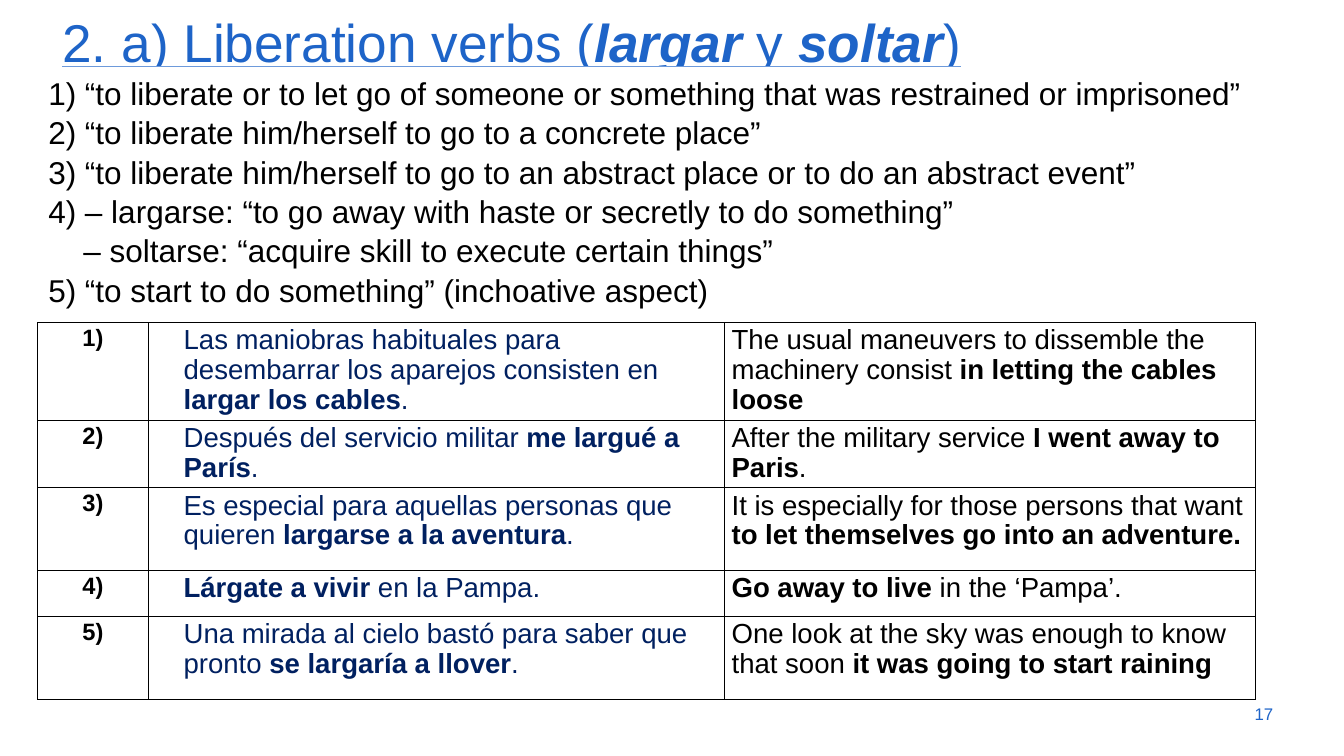
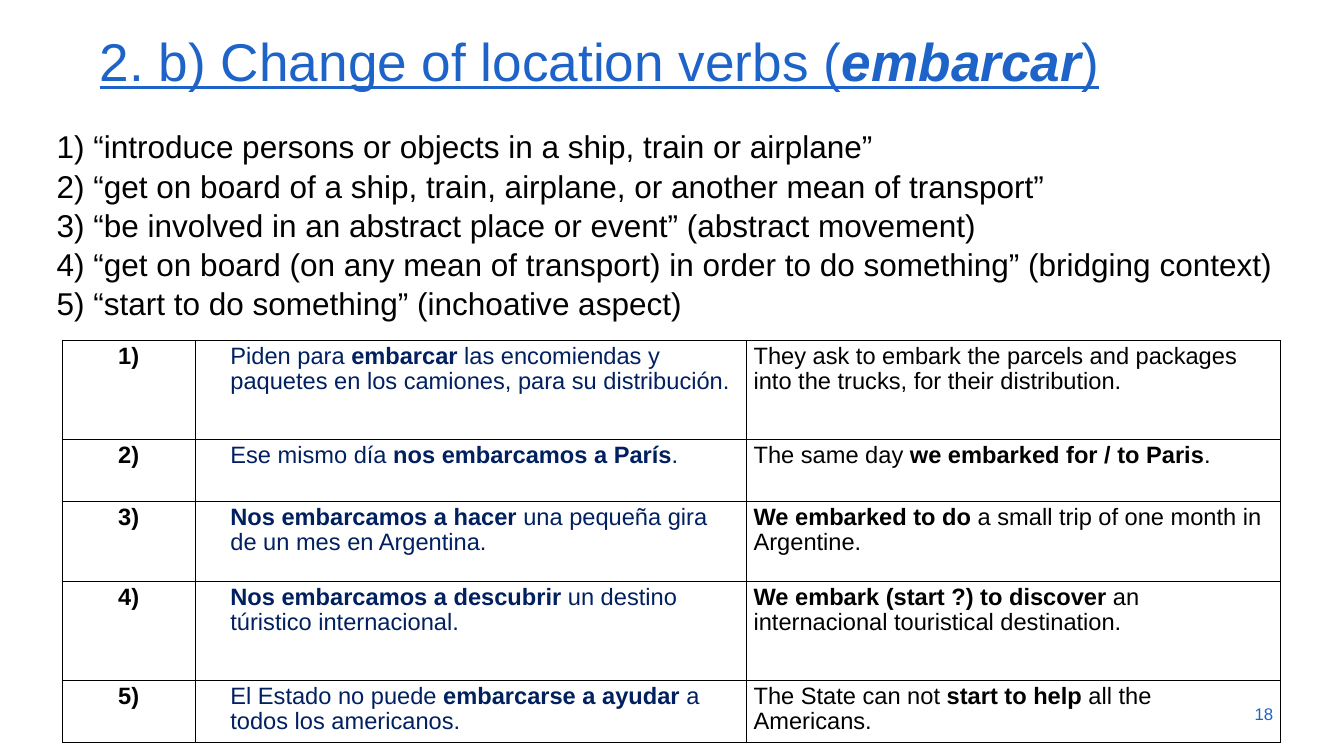
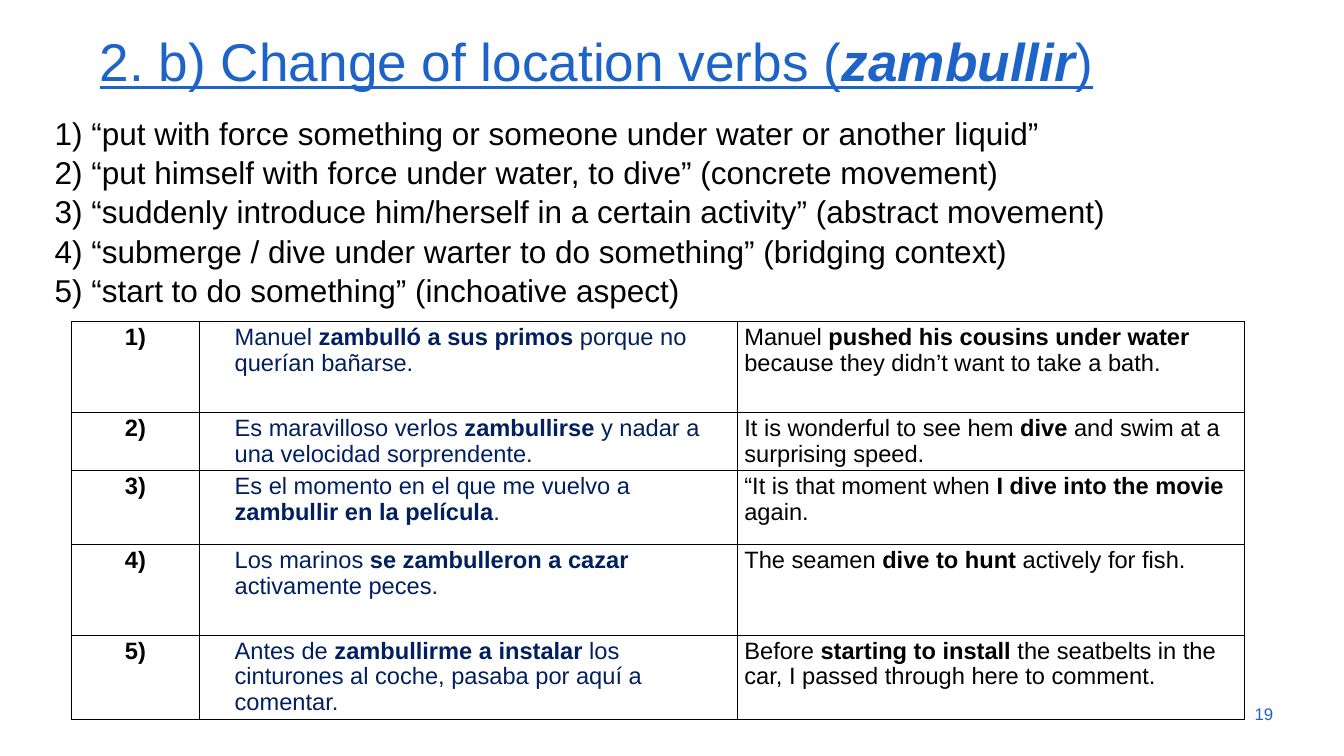
from pptx import Presentation, util as u
from pptx.dml import color
from pptx.enum import text as t
from pptx.oxml import parse_xml
from pptx.oxml.ns import nsdecls

Pt = u.Pt
BLUE, NAVY, BLACK, WHITE = "1E64C8", "002060", "000000", "FFFFFF"
INDENT = 28.8
LEFT, MID, RIGHT = t.PP_ALIGN.LEFT, t.PP_ALIGN.CENTER, t.PP_ALIGN.RIGHT


def hue(code):
    return color.RGBColor.from_string(code)


def write(para, words, size, ink, mark, align=LEFT, indent=0, lines=1.0, line=False):
    props = para._p.get_or_add_pPr()
    props.set("marL", str(Pt(indent)))
    props.set("indent", "0")
    props.append(parse_xml(f"<a:buNone {nsdecls('a')}/>"))
    form = {"alignment": align, "line_spacing": lines,
            "space_before": Pt(0), "space_after": Pt(0)}
    for key, value in form.items():
        setattr(para, key, value)
    for i, part in enumerate(words.split("*")):
        if not part:
            continue
        run = para.add_run()
        run.text = part
        look = {"name": "Arial", "size": Pt(size), "underline": line,
                "bold": False, "italic": False}
        if i % 2:
            look.update(mark)
        for key, value in look.items():
            setattr(run.font, key, value)
        run.font.color.rgb = hue(ink)


BOLD = {"bold": True}
BOTH = {"bold": True, "italic": True}

PAGES = [
    {
        "title": "2. a) Liberation verbs (*largar* y *soltar*)",
        "head": (27.4, 0),
        "body": (13, 67.7, 1339, 700),
        "list": [
            "1) “to liberate or to let go of someone or something that was restrained or imprisoned”",
            "2) “to liberate him/herself to go to a concrete place”",
            "3) “to liberate him/herself to go to an abstract place or to do an abstract event”",
            "4) – largarse: “to go away with haste or secretly to do something”",
            "– soltarse: “acquire skill to execute certain things”",
            "5) “to start to do something” (inchoative aspect)",
        ],
        "spot": (38.2, 327.6),
        "cols": (112.3, 585.4, 539.3),
        "rows": (99.4, 68.4, 84.2, 46.8, 84.2),
        "size": 28,
        "cells": [
            ("Las maniobras habituales para desembarrar los aparejos consisten en *largar los cables*.",
             "The usual maneuvers to dissemble the machinery consist *in letting the cables loose*"),
            ("Después del servicio militar *me largué a París*.",
             "After the military service *I went away to Paris*."),
            ("Es especial para aquellas personas que quieren *largarse a la aventura*.",
             "It is especially for those persons that want *to let themselves go into an adventure.*"),
            ("*Lárgate a vivir* en la Pampa.",
             "*Go away to live* in the ‘Pampa’."),
            ("Una mirada al cielo bastó para saber que pronto *se largaría a llover*.",
             "One look at the sky was enough to know that soon *it was going to start raining*"),
        ],
    },
    {
        "title": "2. b) Change of location verbs (*embarcar*)",
        "head": (65.5, 20.2),
        "body": (21.6, 121.7, 1326, 680),
        "list": [
            "1) “introduce persons or objects in a ship, train or airplane”",
            "2) “get on board of a ship, train, airplane, or another mean of transport”",
            "3) “be involved in an abstract place or event” (abstract movement)",
            "4) “get on board (on any mean of transport) in order to do something” (bridging context)",
            "5) “start to do something” (inchoative aspect)",
        ],
        "spot": (63.4, 345.6),
        "cols": (134.6, 560.2, 542.2),
        "rows": (100.8, 62.6, 81.4, 100.8, 62.6),
        "size": 24,
        "cells": [
            ("Piden para *embarcar* las encomiendas y paquetes en los camiones, para su distribución.",
             "They ask to embark the parcels and packages into the trucks, for their distribution."),
            ("Ese mismo día *nos embarcamos a París*.",
             "The same day *we embarked for / to Paris*."),
            ("*Nos embarcamos a hacer* una pequeña gira de un mes en Argentina.",
             "*We embarked to do* a small trip of one month in Argentine."),
            ("*Nos embarcamos a descubrir* un destino túristico internacional.",
             "*We embark (start ?) to discover* an internacional touristical destination."),
            ("El Estado no puede *embarcarse a ayudar* a todos los americanos.",
             "The State can not *start to help* all the Americans."),
        ],
    },
    {
        "title": "2. b) Change of location verbs (*zambullir*)",
        "head": (65.5, 20.2),
        "body": (19.4, 108, 1326, 640),
        "list": [
            "1) “put with force something or someone under water or another liquid”",
            "2) “put himself with force under water, to dive” (concrete movement)",
            "3) “suddenly introduce him/herself in a certain activity” (abstract movement)",
            "4) “submerge / dive under warter to do something” (bridging context)",
            "5) “start to do something” (inchoative aspect)",
        ],
        "spot": (72.7, 326.9),
        "cols": (129.6, 546.5, 515.5),
        "rows": (92.2, 59, 74.9, 92.2, 85.7),
        "size": 24,
        "cells": [
            ("Manuel *zambulló a sus primos* porque no querían bañarse.",
             "Manuel *pushed his cousins under water* because they didn’t want to take a bath."),
            ("Es maravilloso verlos *zambullirse* y nadar a una velocidad sorprendente.",
             "It is wonderful to see hem *dive* and swim at a surprising speed."),
            ("Es el momento en el que me vuelvo a *zambullir en la película*.",
             "“It is that moment when *I dive into the movie* again."),
            ("Los marinos *se zambulleron a cazar* activamente peces.",
             "The seamen *dive to hunt* actively for fish."),
            ("Antes de *zambullirme a instalar* los cinturones al coche, pasaba por aquí a comentar.",
             "Before *starting to install* the seatbelts in the car, I passed through here to comment."),
        ],
    },
]

deck = Presentation()
deck.slide_width, deck.slide_height = Pt(1365), Pt(768)

for num, page in enumerate(PAGES, 17):
    slide = deck.slides.add_slide(deck.slide_layouts[1])
    title, body = slide.placeholders
    foot = slide.shapes.add_textbox(0, 0, 0, 0)
    boxes = [
        (title, (*page["head"], 1237, 67.7), 9, t.MSO_ANCHOR.TOP),
        (body, page["body"], 6, t.MSO_ANCHOR.TOP),
        (foot, (1227.6, 704.9, 72.7, 41), 3.6, t.MSO_ANCHOR.MIDDLE),
    ]
    for box, place, inset, anchor in boxes:
        for key, value in zip(("left", "top", "width", "height"), place):
            setattr(box, key, Pt(value))
        form = {"margin_left": Pt(7.2), "margin_right": Pt(7.2),
                "margin_top": Pt(inset), "margin_bottom": Pt(3.6),
                "vertical_anchor": anchor, "word_wrap": True,
                "auto_size": t.MSO_AUTO_SIZE.NONE}
        for key, value in form.items():
            setattr(box.text_frame, key, value)

    body.fill.solid()
    body.fill.fore_color.rgb = hue(WHITE)
    write(title.text_frame.paragraphs[0], page["title"], 54, BLUE, BOTH,
          indent=INDENT, line=True)
    for i, item in enumerate(page["list"]):
        frame = body.text_frame
        para = frame.add_paragraph() if i else frame.paragraphs[0]
        shift = 35.6 if item.startswith("–") else 0
        write(para, item, 32, BLACK, BOLD, indent=INDENT + shift, lines=1.04)
    write(foot.text_frame.paragraphs[0], str(num), 17.1, BLUE, BOLD, align=RIGHT)

    cols, rows = page["cols"], page["rows"]
    area = (*page["spot"], sum(cols), sum(rows))
    table = slide.shapes.add_table(len(rows), len(cols), *map(Pt, area)).table
    table.first_row = table.horz_banding = False
    for col, width in zip(table.columns, cols):
        col.width = Pt(width)
    for r, (pair, height) in enumerate(zip(page["cells"], rows)):
        table.rows[r].height = Pt(height)
        looks = [
            (f"*{r + 1})*", 24, BLACK, MID, 0),
            (pair[0], page["size"], NAVY, LEFT, INDENT),
            (pair[1], page["size"], BLACK, LEFT, 0),
        ]
        for c, (words, size, ink, align, indent) in enumerate(looks):
            cell = table.cell(r, c)
            props = cell._tc.get_or_add_tcPr()
            for side in "LRTB":
                props.append(parse_xml(
                    f'<a:ln{side} {nsdecls("a")} w="{Pt(1)}"><a:solidFill>'
                    f'<a:srgbClr val="{BLACK}"/></a:solidFill></a:ln{side}>'))
            cell.fill.background()
            write(cell.text_frame.paragraphs[0], words, size, ink, BOLD,
                  align=align, indent=indent, lines=0.97)

deck.save("out.pptx")
